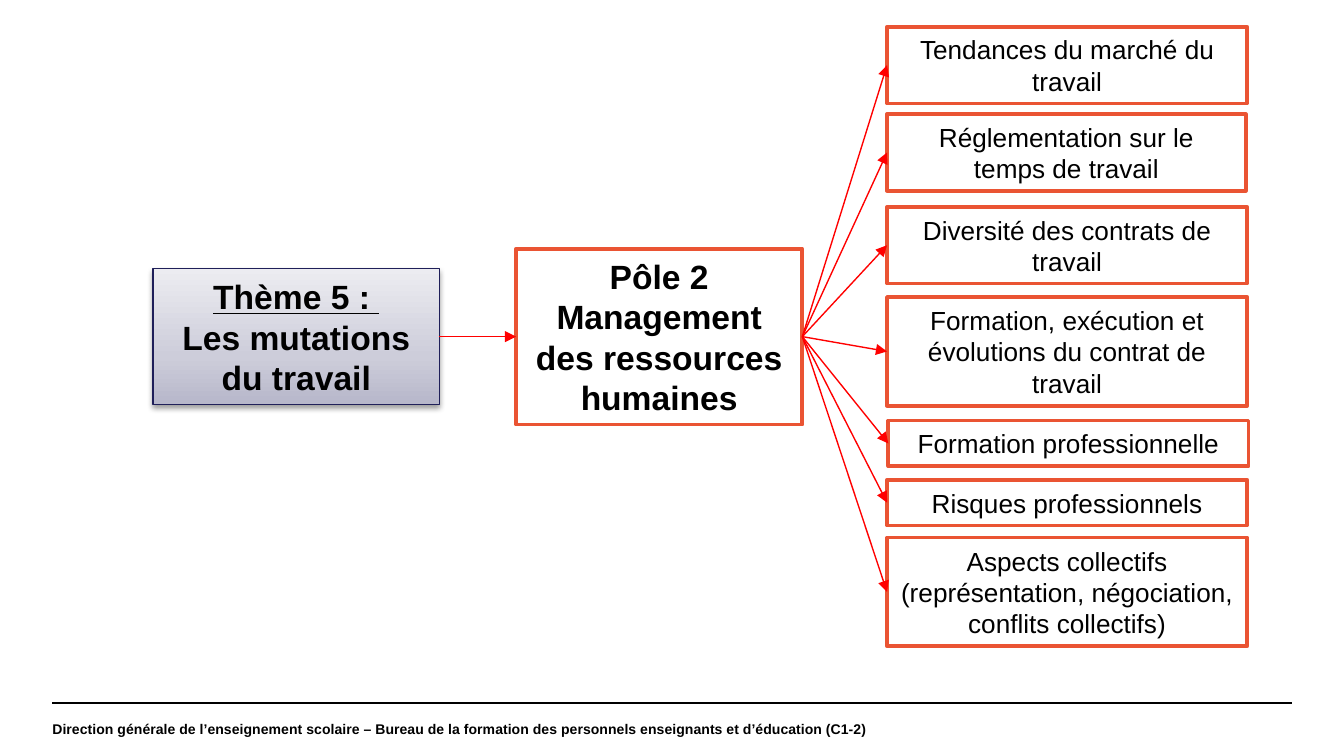
"""Build the slide linking theme 5 to the topics of the human resources pole."""
from copy import deepcopy

from lxml import etree
from pptx import Presentation
from pptx.dml.color import RGBColor
from pptx.enum.shapes import MSO_CONNECTOR, MSO_SHAPE
from pptx.enum.text import MSO_ANCHOR, MSO_AUTO_SIZE, PP_ALIGN
from pptx.oxml.ns import qn
from pptx.util import Inches, Pt

STRAIGHT = MSO_CONNECTOR.STRAIGHT
RECTANGLE = MSO_SHAPE.RECTANGLE
MIDDLE = MSO_ANCHOR.MIDDLE
GROW = MSO_AUTO_SIZE.SHAPE_TO_FIT_TEXT
CENTER = PP_ALIGN.CENTER
RIGHT_SIDE, LEFT_SIDE = 3, 1

COLORS = {
    "text": "000000",
    "white": "FFFFFF",
    "orange": "EA5433",
    "navy": "1F1F59",
    "arrow": "FF0000",
}
THEME_GRADIENT = [(0, "B7B7CA"), (0.35, "CDCDDA"), (1, "ECECF1")]
TOPICS = [
    ("Tendances du marché du travail", 6.6, 0.2, 2.68, 0.57),
    ("Réglementation sur le temps de travail", 6.6, 0.85, 2.67, 0.57),
    ("Diversité des contrats de travail", 6.6, 1.54, 2.68, 0.57),
    ("Formation, exécution et évolutions du contrat de travail", 6.6, 2.21, 2.68, 0.81),
    ("Formation professionnelle", 6.61, 3.13, 2.68, 0.34),
    ("Risques professionnels", 6.6, 3.57, 2.68, 0.34),
    ("Aspects collectifs (représentation, négociation, conflits collectifs)", 6.6, 4, 2.68, 0.81),
]


def add_box(lines, left, top, width, height, size, bold=False):
    box = page.shapes.add_shape(
        RECTANGLE, Inches(left), Inches(top), Inches(width), Inches(height)
    )
    box.shadow.inherit = False
    box.fill.solid()
    box.fill.fore_color.rgb = RGBColor.from_string(COLORS["white"])
    box.line.color.rgb = RGBColor.from_string(COLORS["orange"])
    box.line.width = Pt(2)
    frame = box.text_frame
    frame.word_wrap = True
    frame.auto_size = GROW
    frame.vertical_anchor = MIDDLE
    frame.text = "\n".join(lines)
    for para in frame.paragraphs:
        para.alignment = CENTER
        para.font.name = "Arial"
        para.font.size = Pt(size)
        para.font.bold = bold
        para.font.color.rgb = RGBColor.from_string(COLORS["text"])
    return box


def add_line(color, width, start=(0, 0), end=(0, 0)):
    line = page.shapes.add_connector(STRAIGHT, *map(Inches, start + end))
    line.line.color.rgb = RGBColor.from_string(COLORS[color])
    line.line.width = Pt(width)
    etree.SubElement(line.element.spPr, qn("a:effectLst"))
    return line


deck = Presentation()
deck.slide_width = Inches(10)
deck.slide_height = deck.slide_width * 9 // 16
page = deck.slides.add_slide(deck.slide_layouts[6])

add_line("text", 0.8, (0.39, 5.23), (9.61, 5.23))
footer = page.shapes.add_textbox(Inches(0.39), Inches(5.23), Inches(9.33), Inches(0.39))
frame = footer.text_frame
frame.word_wrap = True
frame.vertical_anchor = MIDDLE
frame.margin_left = frame.margin_right = frame.margin_top = frame.margin_bottom = 0
para = frame.paragraphs[0]
para.text = (
    "Direction générale de l’enseignement scolaire – "
    "Bureau de la formation des personnels enseignants et d’éducation (C1-2)"
)
para.font.name = "Arial"
para.font.size = Pt(7.5)
para.font.bold = True
para.font.color.rgb = RGBColor.from_string(COLORS["text"])

theme = add_box(["Thème 5 : ", "Les mutations du travail"], 1.14, 2, 2.13, 1.01, 18, True)
theme.text_frame.paragraphs[0].font.underline = True
theme.line.color.rgb = RGBColor.from_string(COLORS["navy"])
theme.line.width = Pt(0.75)
theme.fill.gradient()
theme.fill.gradient_angle = 90
stops = theme.element.spPr.find(".//" + qn("a:gsLst"))
stops.append(deepcopy(stops[0]))
for stop, (position, color) in zip(theme.fill.gradient_stops, THEME_GRADIENT):
    stop.position = position
    stop.color.rgb = RGBColor.from_string(color)
effects = theme.element.spPr.find(qn("a:effectLst"))
shadow = etree.SubElement(
    effects, qn("a:outerShdw"), blurRad=str(Pt(3.1)), dist=str(Pt(1.6)), dir="5400000", rotWithShape="0"
)
shade = etree.SubElement(shadow, qn("a:srgbClr"), val=COLORS["text"])
etree.SubElement(shade, qn("a:alpha"), val="38000")

pole = add_box(["Pôle 2", "Management des ressources humaines"], 3.84, 1.85, 2.13, 1.31, 18, True)
topics = [add_box([label], *place, 14) for label, *place in TOPICS]

for source, target in [(theme, pole)] + [(pole, topic) for topic in topics]:
    arrow = add_line("arrow", 0.75)
    arrow.begin_connect(source, RIGHT_SIDE)
    arrow.end_connect(target, LEFT_SIDE)
    etree.SubElement(arrow.element.spPr.find(qn("a:ln")), qn("a:tailEnd"), type="triangle")

deck.save("out.pptx")
